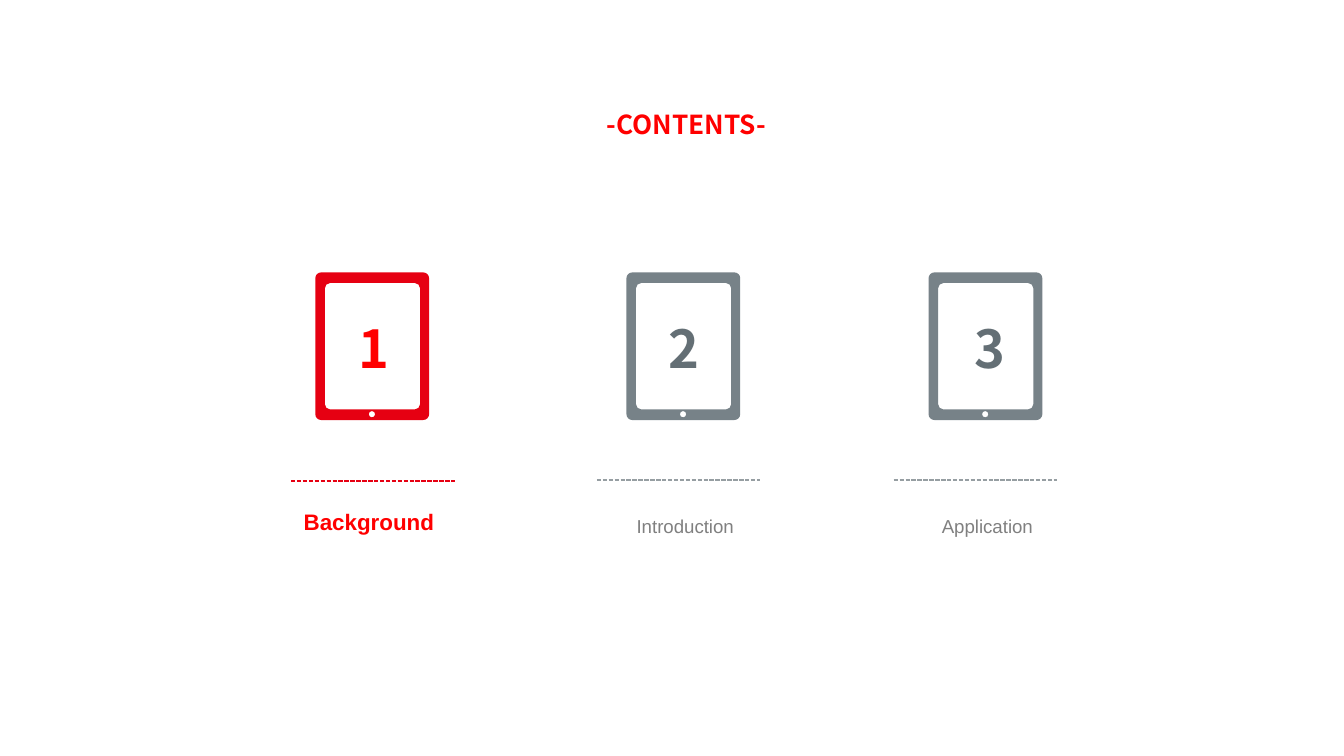
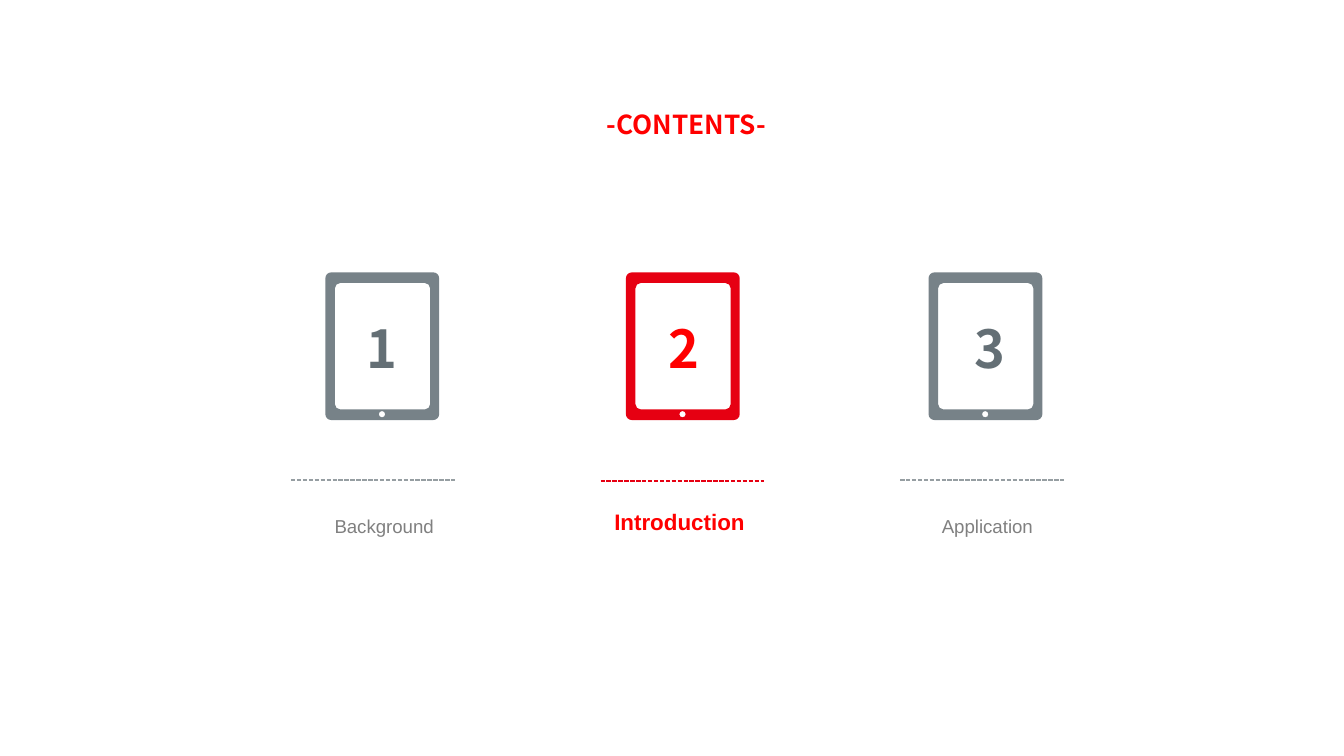
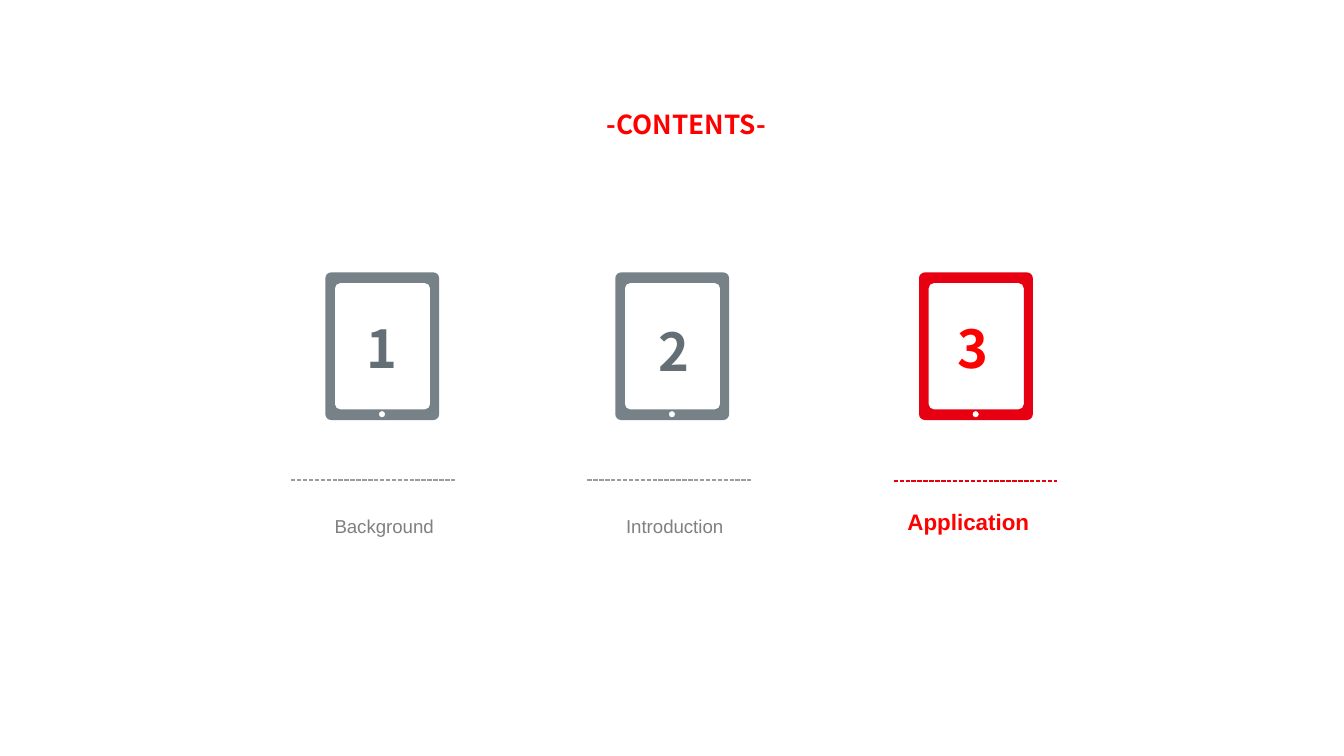
from dataclasses import dataclass

from lxml import etree
from pptx import Presentation
from pptx import util as u
from pptx.dml.color import RGBColor
from pptx.enum import dml, shapes, text
from pptx.oxml import ns

RED = RGBColor(0xFF, 0x00, 0x00)
CRIMSON = RGBColor(0xE6, 0x00, 0x12)
STEEL = RGBColor(0x77, 0x82, 0x88)
SLATE = RGBColor(0x64, 0x6F, 0x75)
SILVER = RGBColor(0x96, 0x9E, 0xA2)
GRAY = RGBColor(0x80, 0x80, 0x80)
SANS, NOTO = "Arial", "Noto Sans CJK SC"
LEFT, CENTER = text.PP_ALIGN.LEFT, text.PP_ALIGN.CENTER
TOPICS = ("Background", "Introduction", "Application")
BEND = 0.55


@dataclass
class Card:
    """Left edges in centimetres of the parts of one topic."""
    tablet: float
    digit: float
    rule: float
    label: float
    width: float = 2.72
    top: float = 5.49


SLIDES = (
    (Card(5.96, 6.52, 5.5, 5.49),
     Card(11.84, 12.38, 11.28, 11.59),
     Card(17.55, 18.16, 16.89, 17.3, width=1.55)),
    (Card(6.15, 6.68, 5.5, 5.9),
     Card(11.83, 12.38, 11.35, 11.36),
     Card(17.55, 18.16, 17.01, 17.3, width=1.55)),
    (Card(6.15, 6.68, 5.5, 5.9),
     Card(11.63, 12.19, 11.1, 11.39, width=1.55, top=5.55),
     Card(17.37, 17.84, 16.89, 16.9, width=1.37)),
)


def write(frame, words, font=NOTO, size=12, color=RED, bold=True,
          align=LEFT, space=1.3):
    """Fill a text frame with one formatted paragraph."""
    frame.word_wrap = True
    frame.auto_size = text.MSO_AUTO_SIZE.SHAPE_TO_FIT_TEXT
    frame.vertical_anchor = text.MSO_ANCHOR.TOP
    para = frame.paragraphs[0]
    para.alignment, para.line_spacing = align, space
    run = para.add_run()
    run.text = words
    run.font.name, run.font.size, run.font.bold = font, u.Pt(size), bold
    run.font.color.rgb = color


def add_text(slide, words, x, y, w, h, **style):
    """Add a text box, measured in centimetres."""
    box = slide.shapes.add_textbox(u.Cm(x), u.Cm(y), u.Cm(w), u.Cm(h))
    write(box.text_frame, words, **style)


def add_title(slide):
    """Place the shared heading in the title placeholder."""
    title = slide.shapes.title
    title.left, title.top = u.Cm(11.12), u.Cm(1.75)
    title.width, title.height = u.Cm(3.71), u.Cm(0.97)
    write(title.text_frame, "-CONTENTS-", size=14, align=CENTER)


def round_box(x, y, w, h, r):
    """Return the ends of the four corners of a round rectangle."""
    x2, y2 = x + w, y + h
    ends = ((x2, y2 - r), (x2 - r, y2), (x + r, y2), (x, y2 - r),
            (x, y + r), (x + r, y), (x2 - r, y), (x2, y + r))
    return [(u.Cm(a), u.Cm(b)) for a, b in ends]


def bend(shape):
    """Turn each corner cut of the outline into a curve."""
    count, last = 0, None
    for step in list(shape._element.iter(ns.qn("a:moveTo"), ns.qn("a:lnTo"))):
        count = 0 if step.tag == ns.qn("a:moveTo") else count + 1
        end = tuple(int(step[0].get(key)) for key in "xy")
        if count % 2:
            tip = (end[0], last[1]) if count % 4 == 3 else (last[0], end[1])
            step.tag = ns.qn("a:cubicBezTo")
            for place, start in enumerate((last, end)):
                knot = etree.Element(ns.qn("a:pt"))
                for key, a, b in zip("xy", start, tip):
                    knot.set(key, str(round(a + BEND * (b - a))))
                step.insert(place, knot)
        last = end


def add_tablet(slide, x, y, color):
    """Draw a tablet with its screen and button cut out."""
    body = round_box(x, y, 2.15, 2.79, 0.11)
    holes = (round_box(x + 0.18, y + 0.2, 1.8, 2.39, 0.1),
             round_box(x + 1.01, y + 2.62, 0.12, 0.12, 0.06))
    pen = slide.shapes.build_freeform(*body[0])
    pen.add_line_segments(body[1:])
    for hole in holes:
        pen.move_to(*hole[0])
        pen.add_line_segments(hole[1:])
    shape = pen.convert_to_shape()
    bend(shape)
    shape.shadow.inherit = False
    shape.fill.solid()
    shape.fill.fore_color.rgb = color
    shape.line.fill.background()


def add_rule(slide, x, y, color):
    """Draw a dashed rule above a label."""
    rule = slide.shapes.add_connector(
        shapes.MSO_CONNECTOR.STRAIGHT,
        u.Cm(x), u.Cm(y), u.Cm(x + 3.09), u.Cm(y))
    rule.line.color.rgb = color
    rule.line.width = u.Pt(0.79)
    rule.line.dash_style = dml.MSO_LINE.SQUARE_DOT
    etree.SubElement(rule._element.spPr, ns.qn("a:effectLst"))


def add_card(slide, card, number, topic, active):
    """Draw one topic, in red if it is the current one."""
    if active:
        add_text(slide, topic, card.label, 9.32, 3.1, 0.86, font=SANS)
    else:
        add_text(slide, topic, card.label, 9.53, 2.72, 0.74, font=SANS, size=10,
                 color=GRAY, bold=False, align=CENTER, space=1.2)
    add_text(slide, str(number), card.digit, card.top, card.width, 1.65,
             size=28, color=RED if active else SLATE)
    add_tablet(slide, card.tablet, 5.15, CRIMSON if active else STEEL)
    add_rule(slide, card.rule, 9.09 if active else 9.07,
             CRIMSON if active else SILVER)


def main():
    """Build a contents slide for each topic."""
    deck = Presentation()
    deck.slide_width, deck.slide_height = u.Cm(25.4), u.Cm(14.29)
    for current, cards in enumerate(SLIDES, 1):
        slide = deck.slides.add_slide(deck.slide_layouts[5])
        add_title(slide)
        for number, (card, topic) in enumerate(zip(cards, TOPICS), 1):
            add_card(slide, card, number, topic, number == current)
    deck.save("out.pptx")


if __name__ == "__main__":
    main()
